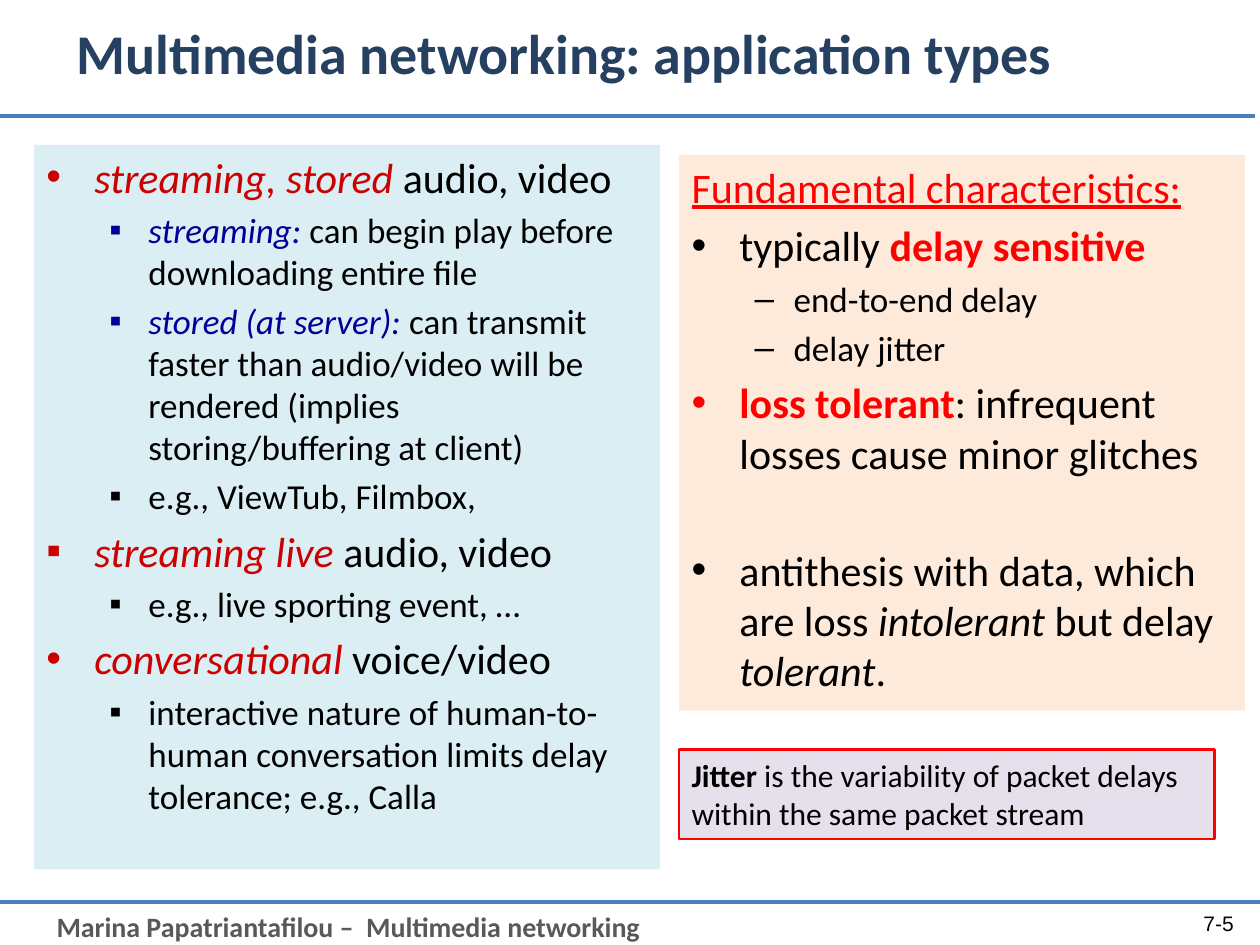
from lxml.etree import SubElement
from pptx import Presentation
from pptx.dml.color import RGBColor
from pptx.enum.shapes import MSO_CONNECTOR, MSO_SHAPE
from pptx.enum.text import MSO_ANCHOR, PP_ALIGN
from pptx.oxml.ns import qn
from pptx.util import Inches, Pt

COLORS = {
    "rule": "4B7EBC", "title": "254061", "foot": "595959",
    "text": "000000", "topic": "CC0000", "term": "000099", "alert": "FF0000",
    "apps": "DBEEF4", "traits": "FDEADA", "note": "E6E0EC",
}
SIZES = (24, 20)                        # text size by level
INDENTS = ((0.38, 0.38), (0.81, 0.31))  # margin and hanging part by level

# Each item: level, bullet, runs of (text, color, style letters b/i/u)
APPS = [
    (0, "•", [("streaming, stored ", "topic", "i"), ("audio, video", "text", "")]),
    (1, "▪", [("streaming: ", "term", "i"),
              ("can begin play before downloading entire file", "text", "")]),
    (1, "▪", [("stored (at server): ", "term", "i"),
              ("can transmit faster than audio/video will be rendered "
               "(implies storing/buffering at client)", "text", "")]),
    (1, "▪", [("e.g., ViewTub, Filmbox,", "text", "")]),
    (0, "▪", [("streaming live ", "topic", "i"), ("audio, video", "text", "")]),
    (1, "▪", [("e.g., live sporting event, …", "text", "")]),
    (0, "•", [("conversational ", "topic", "i"), ("voice/video", "text", "")]),
    (1, "▪", [("interactive nature of human-to-human conversation limits "
               "delay tolerance; e.g., Calla", "text", "")]),
]
TRAITS = [
    (0, None, [("Fundamental characteristics:", "alert", "u")]),
    (0, "•", [("typically ", "text", ""), ("delay sensitive", "alert", "b")]),
    (1, "–", [("end-to-end delay", "text", "")]),
    (1, "–", [("delay jitter", "text", "")]),
    (0, "•", [("loss tolerant", "alert", "b"),
              (": infrequent losses cause minor glitches", "text", "")]),
    (0, "•", [("antithesis with data, which are loss ", "text", ""),
              ("intolerant", "text", "i"), (" but delay ", "text", ""),
              ("tolerant", "text", "i"), (".", "text", "")]),
]
NOTE = [("Jitter", "text", "b"),
        (" is the variability of packet delays within the same packet stream",
         "text", "")]


def color(name):
    return RGBColor.from_string(COLORS[name])


def add_runs(para, runs, size, face="Calibri"):
    for text, tone, style in runs:
        run = para.add_run()
        run.text = text
        font = run.font
        font.name, font.size = face, Pt(size)
        font.color.rgb = color(tone)
        font.bold, font.italic = "b" in style, "i" in style
        font.underline = "u" in style


def add_rule(slide, left, top):
    line = slide.shapes.add_connector(
        MSO_CONNECTOR.STRAIGHT, Inches(left), Inches(top),
        Inches(left + 10), Inches(top))
    line.line.color.rgb = color("rule")
    line.line.width = Pt(2.25)
    SubElement(line._element.spPr, qn("a:effectLst"))


def add_label(slide, box, run, size, face="Calibri",
              anchor=MSO_ANCHOR.MIDDLE, align=PP_ALIGN.LEFT):
    frame = slide.shapes.add_textbox(*map(Inches, box)).text_frame
    frame.word_wrap = True
    frame.vertical_anchor = anchor
    para = frame.paragraphs[0]
    para.alignment = align
    add_runs(para, [run], size, face)


def add_panel(slide, box, fill, edge=None):
    shape = slide.shapes.add_shape(MSO_SHAPE.RECTANGLE, *map(Inches, box))
    shape.shadow.inherit = False
    shape.fill.solid()
    shape.fill.fore_color.rgb = color(fill)
    if edge:
        shape.line.color.rgb = color(edge)
        shape.line.width = Pt(1.5)
    else:
        shape.line.fill.background()
    frame = shape.text_frame
    frame.word_wrap = True
    frame.vertical_anchor = MSO_ANCHOR.TOP
    frame.paragraphs[0].alignment = PP_ALIGN.LEFT
    return frame


def set_bullet(para, level, mark):
    props = para._p.get_or_add_pPr()
    margin, hang = INDENTS[level]
    props.set("marL", str(Inches(margin)))
    props.set("indent", str(-Inches(hang)))
    if mark:
        SubElement(props, qn("a:buFont"), typeface="Arial")
        SubElement(props, qn("a:buChar"), char=mark)
    else:
        SubElement(props, qn("a:buNone"))


def add_list(frame, items):
    for pos, (level, mark, runs) in enumerate(items):
        para = frame.add_paragraph() if pos else frame.paragraphs[0]
        para.alignment = PP_ALIGN.LEFT
        para.level = level
        para.space_before = Pt(SIZES[level] * 0.2)
        set_bullet(para, level, mark)
        add_runs(para, runs, SIZES[level])


def main():
    deck = Presentation()
    deck.slide_width, deck.slide_height = Inches(10), Inches(7.5)
    slide = deck.slides.add_slide(deck.slide_layouts[6])

    # Footer
    add_rule(slide, 0, 7.16)
    add_label(slide, (0.35, 7.17, 9.25, 0.37),
              ("Marina Papatriantafilou –  Multimedia networking", "foot", "b"),
              16, anchor=MSO_ANCHOR.TOP)
    add_label(slide, (9.09, 7.13, 0.8, 0.4), ("7-5", "text", ""), 12,
              face="Arial", align=PP_ALIGN.RIGHT)

    # Title
    add_rule(slide, -0.04, 0.92)
    add_label(slide, (0.51, 0, 8.99, 0.83),
              ("Multimedia networking: application types", "title", "b"), 32)

    # Application types
    add_list(add_panel(slide, (0.27, 1.15, 4.97, 5.75), "apps"), APPS)

    # Characteristics, with the closing remark set apart
    traits = add_panel(slide, (5.39, 1.23, 4.49, 4.41), "traits")
    add_list(traits, TRAITS)
    traits.paragraphs[-1].space_before = Pt(38)

    # Definition of jitter
    note = add_panel(slide, (5.39, 5.95, 4.25, 0.71), "note", "alert")
    add_runs(note.paragraphs[0], NOTE, 18)

    deck.save("out.pptx")


if __name__ == "__main__":
    main()
